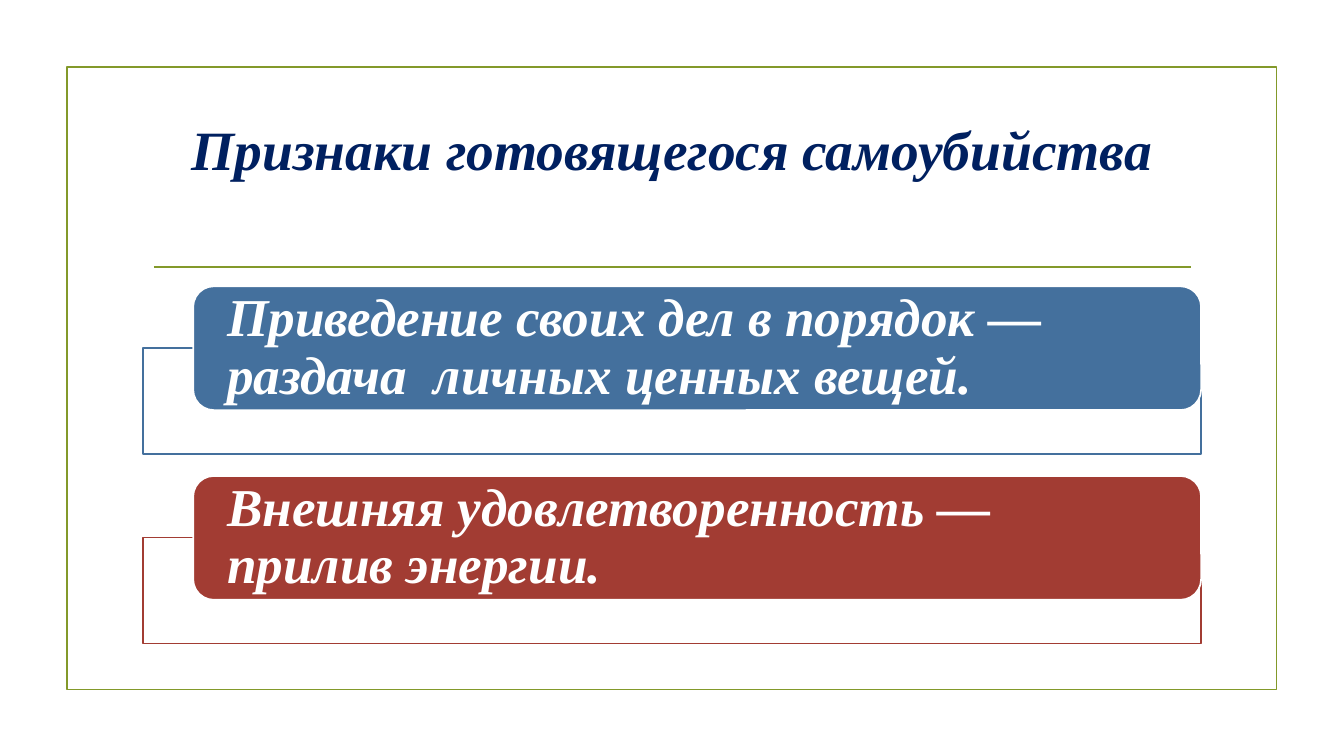
"""Build a slide with a title and two cards listing warning signs."""
from lxml.etree import SubElement
from pptx import Presentation
from pptx.dml.color import RGBColor
from pptx.enum.shapes import MSO_CONNECTOR, MSO_SHAPE
from pptx.enum.text import MSO_ANCHOR, PP_ALIGN
from pptx.oxml.ns import qn
from pptx.util import Pt

COLORS = {"olive": "83992A", "navy": "002060", "white": "FFFFFF",
          "blue": "44709D", "red": "A23C33"}
SIGNS = [("Приведение своих дел в порядок — раздача  личных ценных вещей.", "blue"),
         ("Внешняя удовлетворенность — прилив энергии.", "red")]
TOP, STEP = 204.5, 135.5


def add_box(kind, box, fill, line):
    shape = slide.shapes.add_shape(kind, *map(Pt, box))
    shape.shadow.inherit = False
    if fill:
        shape.fill.solid()
        shape.fill.fore_color.rgb = RGBColor.from_string(COLORS[fill])
    else:
        shape.fill.background()
    shape.line.color.rgb = RGBColor.from_string(COLORS[line])
    shape.line.width = Pt(1.25)
    return shape


def set_text(shape, text, size, color, align, side, bottom):
    frame = shape.text_frame
    frame.word_wrap = True
    frame.vertical_anchor = MSO_ANCHOR.MIDDLE
    frame.margin_left = frame.margin_right = Pt(side)
    frame.margin_top, frame.margin_bottom = Pt(0), Pt(bottom)
    para = frame.paragraphs[0]
    para.text = text
    para.alignment = align
    font = para.font
    font.name, font.size = "Times New Roman", Pt(size)
    font.bold = font.italic = True
    font.color.rgb = RGBColor.from_string(COLORS[color])
    return para


deck = Presentation()
deck.slide_width, deck.slide_height = Pt(960), Pt(540)
slide = deck.slides.add_slide(deck.slide_layouts[6])

add_box(MSO_SHAPE.RECTANGLE, (47.75, 48, 864, 444.5), None, "olive")

rule = slide.shapes.add_connector(
    MSO_CONNECTOR.STRAIGHT, Pt(110), Pt(190.8), Pt(850.5), Pt(190.8))
rule.line.color.rgb = RGBColor.from_string(COLORS["olive"])
rule.line.width = Pt(1.25)
SubElement(rule._element.spPr, qn("a:effectLst"))

title = slide.shapes.add_textbox(Pt(102), Pt(77), Pt(756), Pt(103))
set_text(title, "Признаки готовящегося самоубийства", 39.6, "navy",
         PP_ALIGN.CENTER, 7.2, 45.5)

for row, (text, color) in enumerate(SIGNS):
    top = TOP + row * STEP
    back = add_box(MSO_SHAPE.RECTANGLE, (102, top + 44, 756, 75.6), "white", color)
    tint = back._element.spPr.find(qn("a:solidFill"))[0]
    SubElement(tint, qn("a:alpha"), val="90000")
    card = add_box(MSO_SHAPE.ROUNDED_RECTANGLE, (138, top, 720, 88.5), color, "white")
    para = set_text(card, text, 38, "white", PP_ALIGN.LEFT, 20, 0)
    para.line_spacing = 0.9

deck.save("out.pptx")
